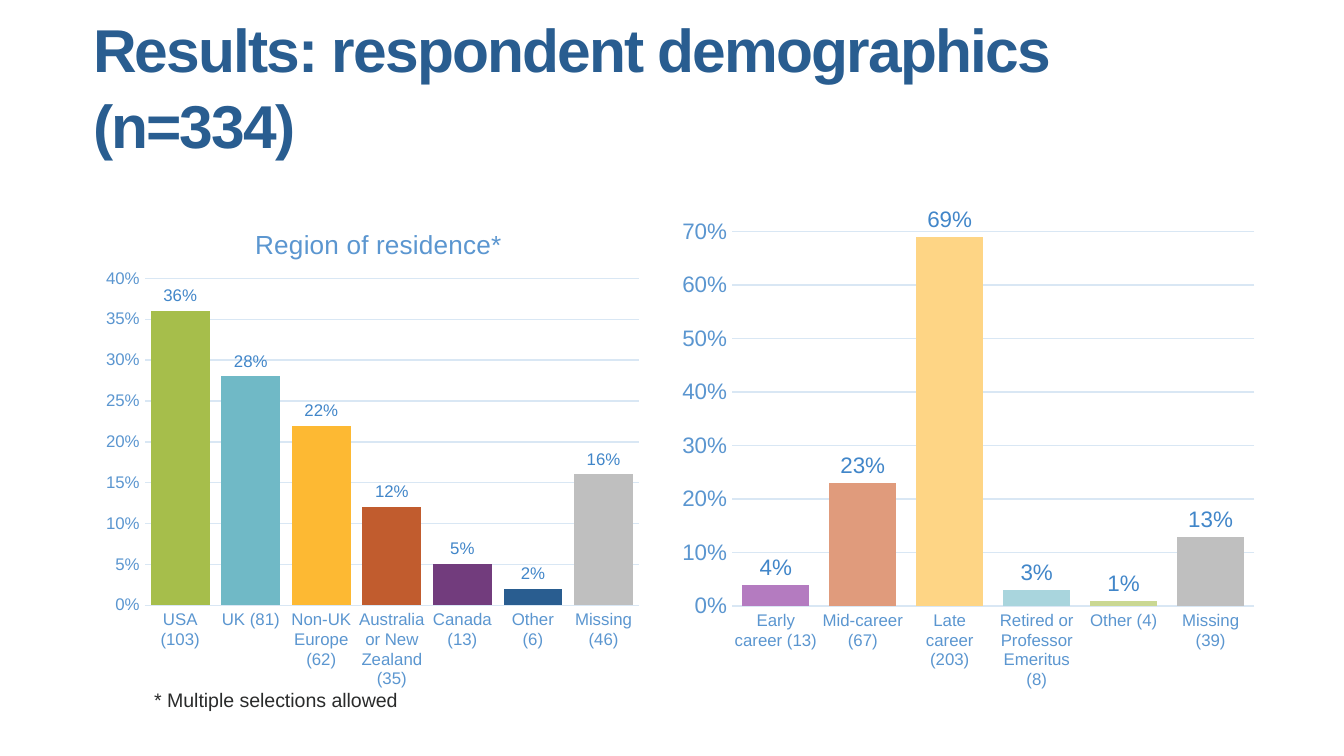
from lxml.etree import SubElement
from pptx import Presentation
from pptx.chart.data import CategoryChartData
from pptx.dml.color import RGBColor
from pptx.enum.chart import XL_CHART_TYPE, XL_LABEL_POSITION, XL_TICK_MARK
from pptx.enum.text import MSO_ANCHOR
from pptx.oxml.ns import qn
from pptx.util import Emu, Pt

PX = 914400 / 134.4
FONT = "Arial"
NAVY, BLUE, LABEL_BLUE = "295D90", "5B96D0", "4186C9"
GRID, GREY, INK = "D9E7F4", "BFBFBF", "2A2B2B"

REGIONS = [
    ("USA (103)", 0.36, "A6BE4B"),
    ("UK (81)", 0.28, "70B9C6"),
    ("Non-UK Europe (62)", 0.22, "FDB933"),
    ("Australia or New Zealand (35)", 0.12, "C15C2E"),
    ("Canada (13)", 0.05, "723C7D"),
    ("Other (6)", 0.02, NAVY),
    ("Missing (46)", 0.16, GREY),
]
CAREERS = [
    ("Early career (13)", 0.04, "B47BC0"),
    ("Mid-career (67)", 0.23, "E09B7C"),
    ("Late career (203)", 0.69, "FED585"),
    ("Retired or Professor Emeritus (8)", 0.03, "A9D5DD"),
    ("Other (4)", 0.01, "CAD893"),
    ("Missing (39)", 0.13, GREY),
]


def px(n):
    return Emu(round(n * PX))


def rgb(color):
    return RGBColor.from_string(color)


def set_font(font, size, color, bold=False):
    font.name, font.size, font.bold = FONT, Pt(size), bold
    font.color.rgb = rgb(color)


def set_line(line, color):
    line.color.rgb = rgb(color)
    line.width = Pt(0.75)


def add_text(slide, box, text, size, color, bold=False):
    tf = slide.shapes.add_textbox(*map(px, box)).text_frame
    tf.word_wrap = True
    p = tf.paragraphs[0]
    p.text = text
    set_font(p.font, size, color, bold)
    return tf


def add_title(slide, box, text):
    tf = add_text(slide, box, text, 32.4, NAVY, bold=True)
    tf.margin_left = tf.margin_right = tf.margin_top = tf.margin_bottom = 0
    tf.vertical_anchor = MSO_ANCHOR.BOTTOM
    p = tf.paragraphs[0]
    p.line_spacing = 1.05
    p.runs[0].font._element.set("spc", "-100")


def set_layout(parent, **settings):
    """Place a chart part by hand, in fractions of the chart area."""
    layout = parent.find(qn("c:layout"))
    if layout is None:
        layout = parent.makeelement(qn("c:layout"))
        parent.insert(0, layout)
    manual = SubElement(layout, qn("c:manualLayout"))
    for tag, value in settings.items():
        SubElement(manual, qn(f"c:{tag}")).set("val", str(value))


def style_axes(chart, value_size, maximum):
    cat, val = chart.category_axis, chart.value_axis
    for axis, size in ((cat, 9), (val, value_size)):
        axis.major_tick_mark = axis.minor_tick_mark = XL_TICK_MARK.NONE
        set_font(axis.tick_labels.font, size, BLUE)
    set_line(cat.format.line, GRID)
    val.format.line.fill.background()
    set_line(val.major_gridlines.format.line, GRID)
    val.minimum_scale, val.maximum_scale = 0, maximum
    val.tick_labels.number_format = "0%"
    val.tick_labels.number_format_is_linked = False


def add_columns(slide, box, rows, value_size, maximum, gap, overlap, plot_box):
    names, values, colors = zip(*rows)
    data = CategoryChartData(number_format="0%")
    data.categories = names
    data.add_series("Series 1", values)
    chart = slide.shapes.add_chart(
        XL_CHART_TYPE.COLUMN_CLUSTERED, *map(px, box), data).chart
    chart.has_legend = chart.has_title = False
    set_font(chart.font, 10, NAVY)
    style_axes(chart, value_size, maximum)

    plot = chart.plots[0]
    plot.gap_width, plot.overlap = gap, overlap
    plot.vary_by_categories = False
    series = plot.series[0]
    series.format.fill.solid()
    series.format.fill.fore_color.rgb = rgb(GREY)
    for i, color in enumerate(colors):
        if color != GREY:
            fill = series.points[i].format.fill
            fill.solid()
            fill.fore_color.rgb = rgb(color)

    labels = series.data_labels
    labels.show_value = True
    labels.position = XL_LABEL_POSITION.OUTSIDE_END
    labels.number_format, labels.number_format_is_linked = "0%", False
    set_font(labels.font, value_size, LABEL_BLUE)

    x, y, w, h = plot_box
    set_layout(chart._chartSpace.chart.plotArea, layoutTarget="inner",
               xMode="edge", yMode="edge", x=x, y=y, w=w, h=h)
    return chart


def add_chart_title(chart, text, x, y):
    p = chart.chart_title.text_frame.paragraphs[0]
    p.text = text
    set_font(p.font, 14, BLUE)
    set_layout(chart.chart_title._element, xMode="edge", yMode="edge", x=x, y=y)


def main():
    prs = Presentation()
    prs.slide_width, prs.slide_height = px(1344), px(756)
    slide = prs.slides.add_slide(prs.slide_layouts[6])
    add_title(slide, (93, 15, 1136, 146),
              "Results: respondent demographics (n=334)")
    regions = add_columns(slide, (95, 198, 555, 503), REGIONS, 9, 0.4,
                          20, -29, (0.09, 0.16, 0.89, 0.65))
    add_chart_title(regions, "Region of residence*", 0.28, 0.05)
    add_columns(slide, (679, 199, 593, 543), CAREERS, 12, 0.7,
                30, -27, (0.09, 0.06, 0.88, 0.69))
    add_text(slide, (141, 681, 487, 39), "* Multiple selections allowed",
             10.5, INK)
    prs.save("out.pptx")


if __name__ == "__main__":
    main()
